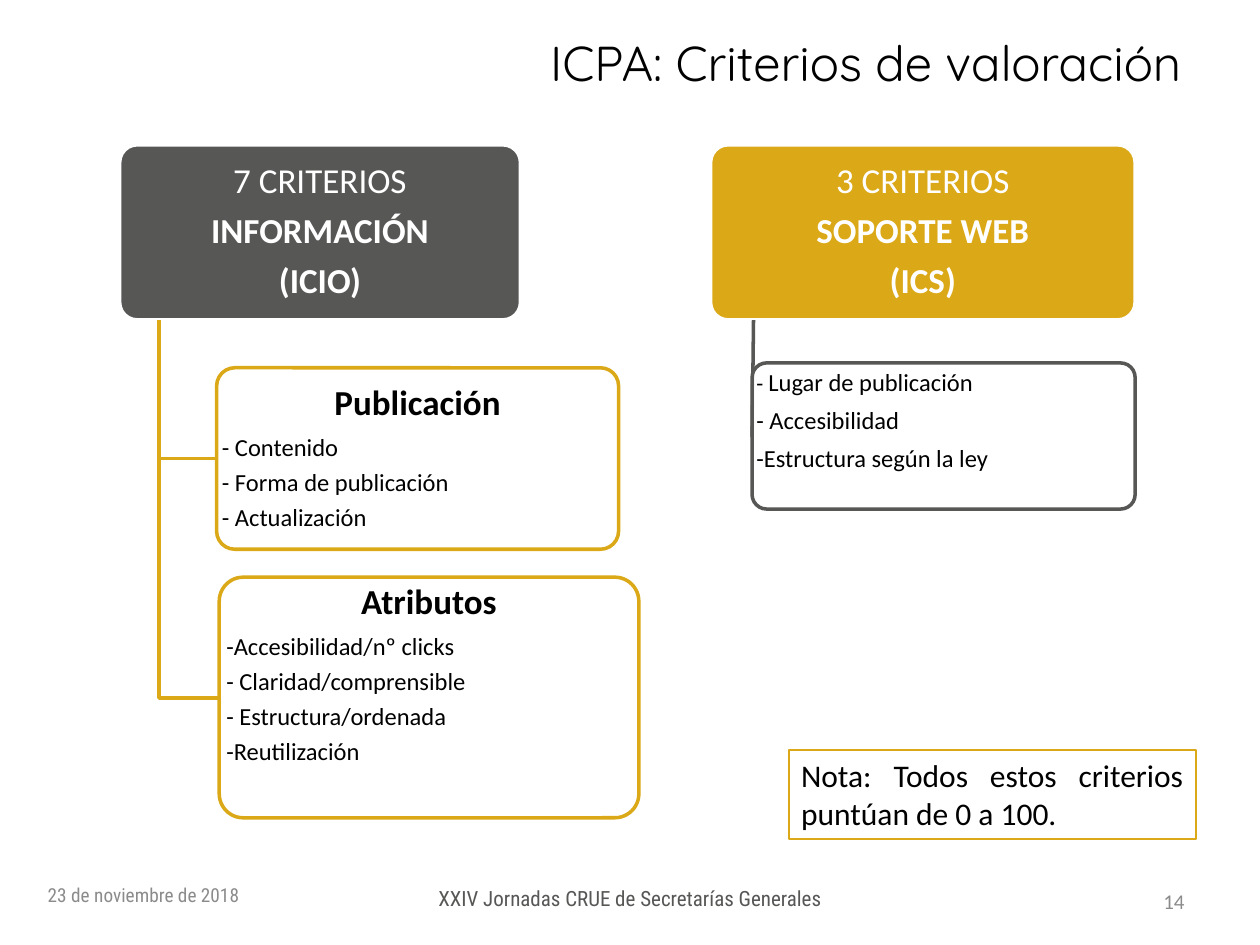
from pptx import Presentation
from pptx.dml.color import RGBColor
from pptx.enum.shapes import MSO_CONNECTOR, MSO_SHAPE
from pptx.enum.text import MSO_ANCHOR, PP_ALIGN
from pptx.oxml.xmlchemy import OxmlElement
from pptx.util import Pt

GOLD = RGBColor(0xDB, 0xA8, 0x17)
DARK = RGBColor(0x57, 0x57, 0x56)
LIGHT = RGBColor(0x8B, 0x8B, 0x8B)
WHITE = RGBColor(0xFF, 0xFF, 0xFF)
BLACK = RGBColor(0x00, 0x00, 0x00)

SPACE_AFTER = 0.35  # share of the text size


def set_values(target, values):
    for name, value in values.items():
        setattr(target, name, value)


def add_paragraph(frame, runs, first, color, bold=False, font="Calibri", **layout):
    """Write (text, size) runs as one paragraph of the frame."""
    paragraph = frame.paragraphs[0] if first else frame.add_paragraph()
    set_values(paragraph, layout)
    for text, size in runs:
        run = paragraph.add_run()
        run.text = text
        set_values(run.font, {"name": font, "size": Pt(size), "bold": bold})
        run.font.color.rgb = color


def add_label(slide, box, text, size, color, font, alignment=PP_ALIGN.LEFT,
              anchor=MSO_ANCHOR.MIDDLE):
    shape = slide.shapes.add_textbox(*map(Pt, box))
    set_values(shape.text_frame, {"word_wrap": True, "vertical_anchor": anchor})
    add_paragraph(shape.text_frame, [(text, size)], True, color, font=font,
                  alignment=alignment)


def add_note(slide, box, text):
    shape = slide.shapes.add_shape(MSO_SHAPE.RECTANGLE, *map(Pt, box))
    shape.shadow.inherit = False
    shape.fill.background()
    set_line(shape, GOLD, 1)
    set_values(shape.text_frame, {"word_wrap": True, "vertical_anchor": MSO_ANCHOR.TOP})
    add_paragraph(shape.text_frame, [(text, 18)], True, BLACK,
                  alignment=PP_ALIGN.JUSTIFY)


def set_line(shape, color, width):
    shape.line.color.rgb = color
    shape.line.width = Pt(width)


def add_card(slide, box, fill, line, anchor):
    """Add a rounded box, whose corners already inset the text."""
    shape = slide.shapes.add_shape(MSO_SHAPE.ROUNDED_RECTANGLE, *map(Pt, box))
    shape.adjustments[0] = 0.1
    shape.shadow.inherit = False
    shape.fill.solid()
    shape.fill.fore_color.rgb = fill
    set_line(shape, line, 2)
    set_values(shape.text_frame, {
        "word_wrap": True, "vertical_anchor": anchor, "margin_left": 0,
        "margin_right": 0, "margin_top": 0, "margin_bottom": 0})
    return shape


def add_header(slide, box, fill, lines):
    frame = add_card(slide, box, fill, WHITE, MSO_ANCHOR.MIDDLE).text_frame
    for index, text in enumerate(lines):
        add_paragraph(frame, [(text, 20)], index == 0, WHITE, bold=index > 0,
                      alignment=PP_ALIGN.CENTER, line_spacing=0.9,
                      space_after=Pt(20 * SPACE_AFTER))


def add_criteria(slide, box, line, items, heading=None, anchor=MSO_ANCHOR.TOP,
                 line_spacing=0.9):
    """Add a nearly opaque card with an optional heading and a list of runs."""
    shape = add_card(slide, box, WHITE, line, anchor)
    alpha = OxmlElement("a:alpha")
    alpha.set("val", "90000")
    shape.fill._xPr.find(".//{*}srgbClr").append(alpha)
    frame = shape.text_frame
    if heading:
        add_paragraph(frame, [(heading, 20)], True, BLACK, bold=True,
                      alignment=PP_ALIGN.CENTER, line_spacing=line_spacing,
                      space_after=Pt(20 * SPACE_AFTER))
    for index, runs in enumerate(items):
        add_paragraph(frame, runs, index == 0 and not heading, BLACK,
                      alignment=PP_ALIGN.LEFT, line_spacing=line_spacing,
                      space_after=Pt(14 * SPACE_AFTER))


def add_branch(slide, left, top, right, bottom):
    """Draw an open line that goes down and then right to a card."""
    builder = slide.shapes.build_freeform(Pt(left), Pt(top))
    builder.add_line_segments([(Pt(left), Pt(bottom)), (Pt(right), Pt(bottom))],
                              close=False)
    shape = builder.convert_to_shape()
    shape.shadow.inherit = False
    shape.fill.background()
    set_line(shape, GOLD, 2)


def add_stem(slide, *ends):
    stem = slide.shapes.add_connector(MSO_CONNECTOR.STRAIGHT, *map(Pt, ends))
    stem._element.spPr.append(OxmlElement("a:effectLst"))
    set_line(stem, DARK, 2)


def list_items(*texts):
    return [[(text, 14)] for text in texts]


def main():
    presentation = Presentation()
    set_values(presentation, {"slide_width": Pt(720), "slide_height": Pt(540)})
    slide = presentation.slides.add_slide(presentation.slide_layouts[6])

    add_label(slide, (269.3, 0, 450.7, 71.3), "ICPA: Criterios de valoración", 28,
              BLACK, "Quicksand", PP_ALIGN.CENTER)
    add_label(slide, (643.7, 500.4, 40.3, 28.8), "14", 12, LIGHT, "Calibri",
              PP_ALIGN.RIGHT)
    add_label(slide, (20.2, 496.8, 167.8, 28.8), "23 de noviembre de 2018", 11,
              LIGHT, "Roboto Condensed")
    add_label(slide, (218.2, 502.6, 283.7, 22.3),
              "XXIV Jornadas CRUE de Secretarías Generales", 12, DARK,
              "Roboto Condensed", PP_ALIGN.CENTER, MSO_ANCHOR.TOP)
    add_note(slide, (450.7, 428.4, 232.6, 51.1),
             "Nota: Todos estos criterios puntúan de 0 a 100.")

    add_header(slide, (68.4, 82.8, 229, 100), DARK,
               ["7 CRITERIOS", "INFORMACIÓN", "(ICIO)"])
    add_branch(slide, 90.9, 182.9, 123.8, 262.1)
    add_criteria(slide, (123.8, 210.2, 229.7, 103.7), GOLD,
                 list_items("- Contenido", "- Forma de publicación", "- Actualización"),
                 "Publicación", MSO_ANCHOR.MIDDLE)
    add_branch(slide, 90.9, 182.9, 125.3, 398.9)
    add_criteria(slide, (125.3, 329.8, 239.8, 137.5), GOLD,
                 list_items("-Accesibilidad/nº clicks", "- Claridad/comprensible",
                            "- Estructura/ordenada", "-Reutilización"),
                 "Atributos")

    add_header(slide, (406.1, 82.8, 242.6, 100), GOLD,
               ["3 CRITERIOS", "SOPORTE WEB", "(ICS)"])
    add_stem(slide, 430.6, 182.9, 429.8, 249.8)
    add_criteria(slide, (429.8, 207.4, 218.9, 83.5), DARK,
                 [[("- ", 13), ("Lugar de publicación", 14)],
                  *list_items("- Accesibilidad", "-Estructura según la ley")],
                 line_spacing=1.0)

    presentation.save("out.pptx")


if __name__ == "__main__":
    main()
